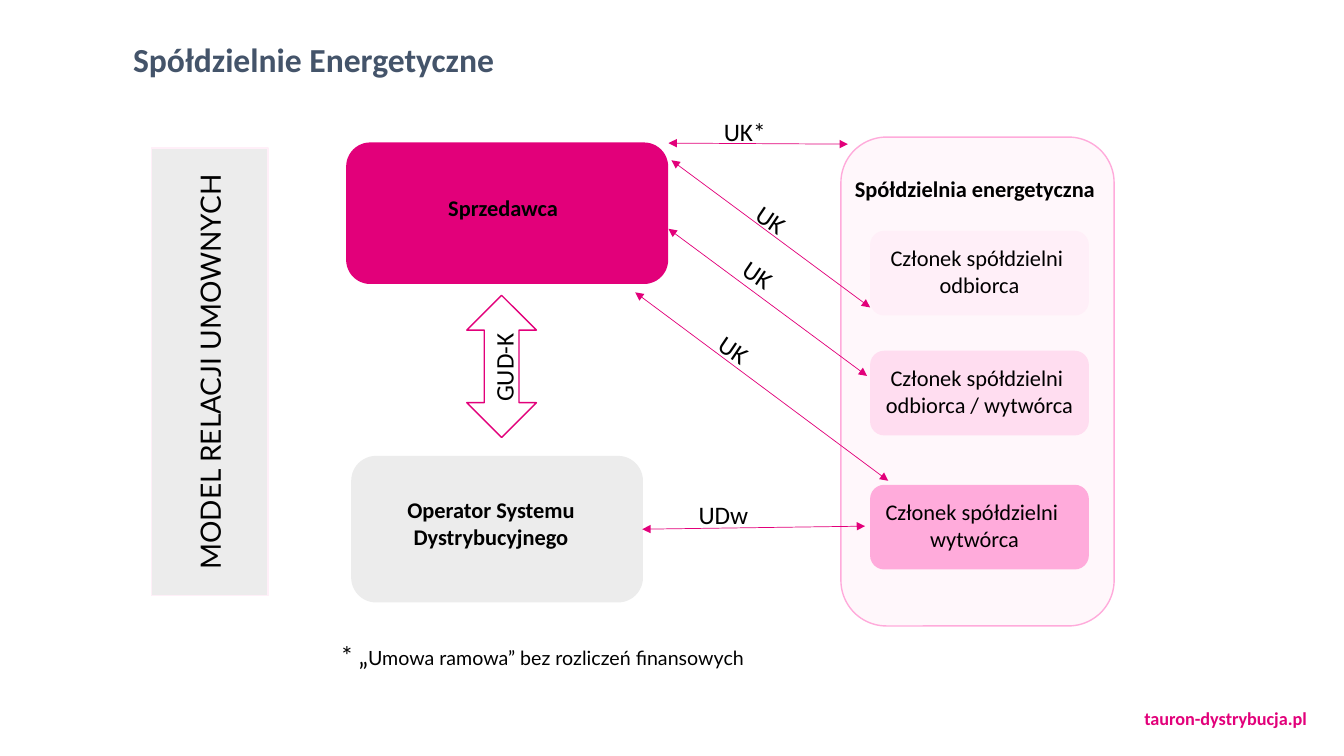
from pptx import Presentation
from pptx.util import Inches, Pt
from pptx.dml.color import RGBColor as RGB
from pptx.enum.shapes import MSO_SHAPE as Shape, MSO_CONNECTOR as Link
from pptx.enum.text import PP_ALIGN as Align, MSO_ANCHOR as Anchor
from pptx.oxml.ns import qn
from lxml.etree import SubElement as Sub

PINK = RGB(0xE2, 0x00, 0x7A)
ROSE = RGB(0xFF, 0xAB, 0xDB)
BLUSH = RGB(0xFF, 0xDD, 0xF0)
PALE = RGB(0xFF, 0xEF, 0xF8)
GRAY = RGB(0xEC, 0xEC, 0xEC)
SLATE = RGB(0x44, 0x54, 0x6A)
BLACK = RGB(0, 0, 0)


class Board:
    font = "Calibri"

    def __init__(self, slide):
        self.slide = slide

    def style(self, para, size, color=BLACK, bold=False, align=None, font=None):
        para.font.name = font or self.font
        para.font.size = Pt(size)
        para.font.bold = bold
        para.font.color.rgb = color
        para.alignment = align

    def title(self, text, x, y, w, h):
        title = self.slide.shapes.title
        title.left, title.top, title.width, title.height = map(Inches, (x, y, w, h))
        frame = title.text_frame
        frame.text = text
        frame.vertical_anchor = Anchor.TOP
        self.style(frame.paragraphs[0], 24, SLATE, True, Align.LEFT)

    def text(self, lines, x, y, w, h, size=18, turn=0, wrap=True, **look):
        box = self.slide.shapes.add_textbox(*map(Inches, (x, y, w, h)))
        box.rotation = turn
        frame = box.text_frame
        frame.word_wrap = wrap
        frame.text = lines
        for para in frame.paragraphs:
            self.style(para, size, **look)
        return frame

    def shape(self, kind, x, y, w, h, fill=None, line=None, alpha=None):
        shape = self.slide.shapes.add_shape(kind, *map(Inches, (x, y, w, h)))
        shape.shadow.inherit = False
        if fill is None:
            shape.fill.background()
        else:
            shape.fill.solid()
            shape.fill.fore_color.rgb = fill
        if alpha:
            tint = shape.fill._xPr.find(qn("a:solidFill"))[0]
            Sub(tint, qn("a:alpha")).set("val", str(alpha * 1000))
        if line is None:
            shape.line.fill.background()
        else:
            shape.line.color.rgb = line
            shape.line.width = Pt(1)
        return shape

    def arrow(self, *ends):
        link = self.slide.shapes.add_connector(Link.STRAIGHT, *map(Inches, ends))
        link.line.color.rgb = PINK
        link.line.width = Pt(0.5)
        props = link.line._get_or_add_ln()
        for end in ("a:headEnd", "a:tailEnd"):
            Sub(props, qn(end)).set("type", "triangle")
        Sub(link._element.spPr, qn("a:effectLst"))


def main():
    deck = Presentation()
    deck.slide_width, deck.slide_height = Inches(13.33), Inches(7.5)
    board = Board(deck.slides.add_slide(deck.slide_layouts[5]))
    head = {"size": 16, "bold": True, "align": Align.CENTER}

    board.title("Spółdzielnie Energetyczne", 1.22, 0.34, 10.9, 0.69)
    board.text("tauron-dystrybucja.pl", 11.06, 6.97, 2, 0.32, 13,
               color=PINK, bold=True, align=Align.RIGHT)

    model = board.shape(Shape.RECTANGLE, -0.14, 3.11, 4.44, 1.16, GRAY, PALE)
    model.rotation = 270
    model.text_frame.text = "MODEL RELACJI UMOWNYCH"
    model.text_frame.vertical_anchor = Anchor.MIDDLE
    board.style(model.text_frame.paragraphs[0], 20, align=Align.CENTER, font="Lato")

    board.shape(Shape.ROUNDED_RECTANGLE, 3.44, 1.42, 3.18, 1.39, PINK, PINK)
    board.text("Sprzedawca", 3.55, 1.88, 2.88, 0.37, **head)
    board.shape(Shape.ROUNDED_RECTANGLE, 3.49, 4.53, 2.88, 1.44, GRAY, GRAY)
    board.text("Operator Systemu Dystrybucyjnego", 3.43, 4.87, 2.88, 0.64, **head)

    board.shape(Shape.ROUNDED_RECTANGLE, 8.34, 1.36, 2.71, 4.85, PALE, ROSE, 44)
    board.text("Spółdzielnia energetyczna ", 8.34, 1.69, 2.71, 0.37, **head)
    for role, left, top, fill in (
        ("odbiorca", 8.63, 2.29, PALE),
        ("odbiorca / wytwórca", 8.63, 3.48, BLUSH),
        ("wytwórca", 8.58, 4.81, ROSE),
    ):
        board.shape(Shape.ROUNDED_RECTANGLE, 8.63, top, 2.17, 0.84, fill)
        board.text("Członek spółdzielni \n" + role, left, top + 0.08, 2.17, 0.64,
                   16, align=Align.CENTER)

    board.shape(Shape.UP_DOWN_ARROW, 4.63, 2.93, 0.69, 1.41, line=PINK)
    board.text("GUD-K", 4.55, 3.44, 0.89, 0.4, turn=270, wrap=False)

    for ends in (
        (6.66, 1.59, 8.63, 3.05),
        (6.63, 2.27, 8.6, 3.73),
        (6.3, 2.9, 8.81, 4.77),
        (6.63, 1.42, 8.41, 1.43),
        (6.37, 5.25, 8.58, 5.22),
    ):
        board.arrow(*ends)
    for name, left, top, turn in (
        ("UK", 7.31, 2.29, 34),
        ("UK", 7.18, 2.84, 34),
        ("UK", 6.94, 3.58, 34),
        ("UK*", 7.08, 1.1, 0),
        ("UDw", 6.83, 4.9, 0),
    ):
        board.text(name, left, top, 1.61, 0.4, turn=turn)

    note = board.text("* „", 3.29, 6.3, 5.76, 0.4, font="Lato").paragraphs[0]
    rest = note.add_run()
    rest.text = "Umowa ramowa” bez rozliczeń finansowych"
    rest.font.size = Pt(14)

    deck.save("out.pptx")


if __name__ == "__main__":
    main()
